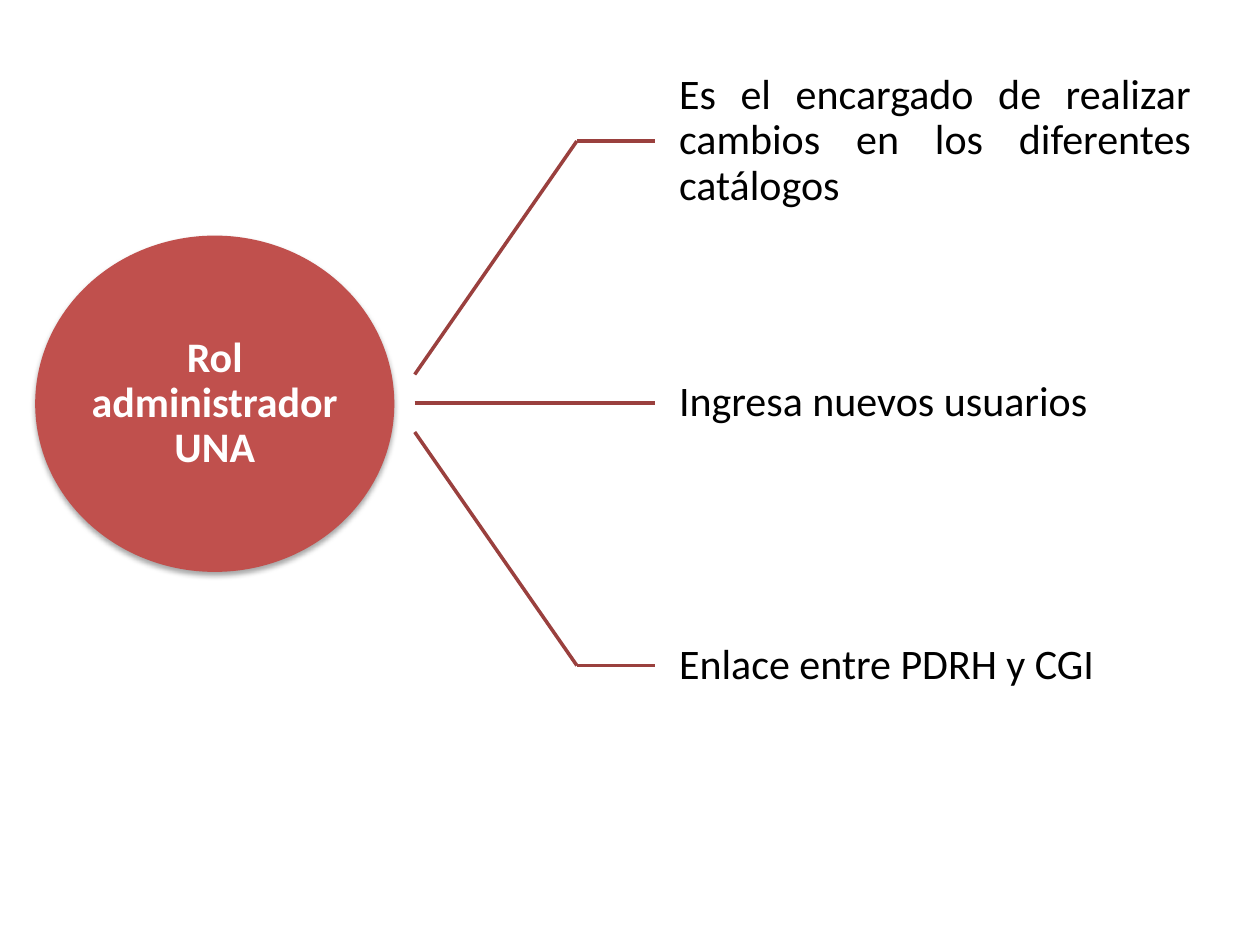
from lxml.etree import SubElement
from pptx import Presentation
from pptx.dml.color import RGBColor
from pptx.enum.shapes import MSO_CONNECTOR, MSO_SHAPE
from pptx.enum.text import MSO_ANCHOR, PP_ALIGN
from pptx.oxml import parse_xml
from pptx.oxml.ns import nsdecls, qn
from pptx.util import Cm, Pt

RED = RGBColor(0xC0, 0x50, 0x4D)
DARK_RED = RGBColor(0x9A, 0x40, 0x3E)
WHITE = RGBColor(0xFF, 0xFF, 0xFF)
BLACK = RGBColor(0x00, 0x00, 0x00)

ROLE = "Rol administrador UNA"
DUTIES = [
    "Es el encargado de realizar cambios en los diferentes catálogos",
    "Ingresa nuevos usuarios",
    "Enlace entre PDRH y CGI",
]


def write(sp, text, align, color, inset, bold=False):
    """Fill a shape with one vertically centred paragraph."""
    tf = sp.text_frame
    tf.word_wrap = True
    tf.vertical_anchor = MSO_ANCHOR.MIDDLE
    tf.margin_left = tf.margin_right = tf.margin_top = tf.margin_bottom = Cm(inset)
    tf.text = text
    p = tf.paragraphs[0]
    p.alignment = align
    p.line_spacing = 0.9
    font = p.runs[0].font
    font.name, font.size, font.bold = "Calibri", Pt(24), bold
    font.color.rgb = color


def add_line(s, x1, y1, x2, y2):
    """Draw a plain dark red line and return it."""
    line = s.shapes.add_connector(
        MSO_CONNECTOR.STRAIGHT, Cm(x1), Cm(y1), Cm(x2), Cm(y2))
    line.line.color.rgb = DARK_RED
    line.line.width = Pt(2)
    SubElement(line._element.spPr, qn("a:effectLst"))
    return line


def add_role(s, left, top, width, height):
    """Draw the central role as a shadowed ellipse."""
    sp = s.shapes.add_shape(
        MSO_SHAPE.OVAL, Cm(left), Cm(top), Cm(width), Cm(height))
    sp.fill.solid()
    sp.fill.fore_color.rgb = RED
    sp.line.fill.background()
    sp._element.spPr.append(parse_xml(
        f'<a:effectLst {nsdecls("a")}>'
        '<a:outerShdw blurRad="40000" dist="23000" dir="5400000" rotWithShape="0">'
        '<a:srgbClr val="000000"><a:alpha val="35000"/></a:srgbClr>'
        '</a:outerShdw></a:effectLst>'))
    write(sp, ROLE, PP_ALIGN.CENTER, WHITE, 0, bold=True)


def add_duties(s, left, top, width, height):
    """Fan out one branch and one text per duty in equal rows."""
    row = height / len(DUTIES)
    elbow, text_left = left + 3.27, left + 4.85
    middle = (len(DUTIES) - 1) / 2
    for i, duty in enumerate(DUTIES):
        y = top + (i + 0.5) * row
        start = top + height / 2 + (i - middle) * 0.58
        add_line(s, left, start, elbow, y)
        stub = add_line(s, elbow, y, text_left, y)
        box = s.shapes.add_textbox(
            Cm(text_left), Cm(top + i * row), Cm(left + width - text_left), Cm(row))
        write(box, duty, PP_ALIGN.JUSTIFY, BLACK, 0.48)
        stub.end_connect(box, 1)


def main():
    """Build the slide and save it."""
    prs = Presentation()
    prs.slide_width, prs.slide_height = Cm(25.4), Cm(19.05)
    s = prs.slides.add_slide(prs.slide_layouts[6])
    add_role(s, 0.71, 4.75, 7.24, 6.78)
    add_duties(s, 8.36, 0.2, 16.13, 15.86)
    prs.save("out.pptx")


if __name__ == "__main__":
    main()
